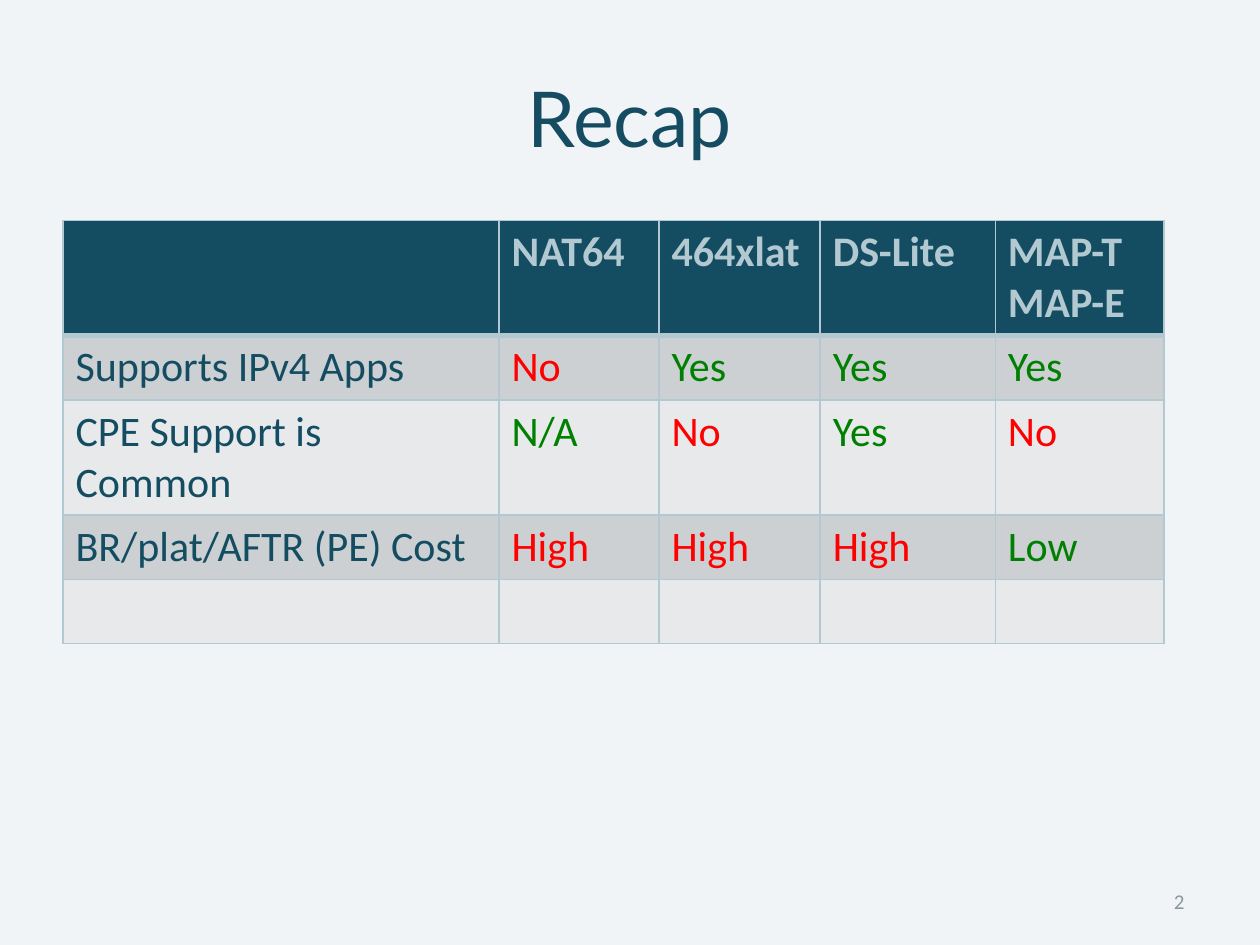
from lxml import etree
from pptx import Presentation
from pptx import util as u
from pptx.dml.color import RGBColor
from pptx.enum import text
from pptx.oxml.ns import qn

COLORS = {
    "background": "F0F4F6", "title": "154C62", "navy": "144D62",
    "pale": "B3C9D1", "band": "CCD0D3", "light": "E7E9EA",
    "bad": "FF0000", "good": "008000", "number": "8C979E",
}
VERDICTS = {"No": "bad", "High": "bad", "Yes": "good", "N/A": "good", "Low": "good"}
ROWS = [
    ["", "NAT64", "464xlat", "DS-Lite", "MAP-T MAP-E"],
    ["Supports IPv4 Apps", "No", "Yes", "Yes", "Yes"],
    ["CPE Support is Common", "N/A", "No", "Yes", "No"],
    ["BR/plat/AFTR (PE) Cost", "High", "High", "High", "Low"],
    ["", "", "", "", ""],
]
COLUMN_WIDTHS = [3.46, 1.27, 1.28, 1.39, 1.34]
ROW_HEIGHTS = [0.91] + [0.51] * 4


class Deck:
    heading_font = "Lato"
    body_font = "Calibri"

    def __init__(self):
        self.prs = Presentation()
        self.prs.slide_width, self.prs.slide_height = u.Inches(10), u.Inches(7.5)
        self.s = self.prs.slides.add_slide(self.prs.slide_layouts[5])
        fill = self.s.background.fill
        fill.solid()
        fill.fore_color.rgb = self.color("background")

    def color(self, name):
        return RGBColor.from_string(COLORS[name])

    def set_text(self, tf, content, size, color, font, bold=False, align=None):
        tf.word_wrap = True
        p = tf.paragraphs[0]
        if content:
            p.add_run().text = content
        p.alignment = align
        p.font.size, p.font.name, p.font.bold = u.Pt(size), font, bold
        p.font.color.rgb = self.color(color)

    def title(self, content, left, top, width, height):
        sp = self.s.shapes.title
        sp.left, sp.top = u.Inches(left), u.Inches(top)
        sp.width, sp.height = u.Inches(width), u.Inches(height)
        sp.text_frame.vertical_anchor = text.MSO_ANCHOR.MIDDLE
        self.set_text(sp.text_frame, content, 44, "title", self.heading_font,
                      align=text.PP_ALIGN.CENTER)

    def label(self, content, left, top, width, height):
        sp = self.s.shapes.add_textbox(*map(u.Inches, (left, top, width, height)))
        sp.text_frame.vertical_anchor = text.MSO_ANCHOR.MIDDLE
        self.set_text(sp.text_frame, content, 12, "number", self.body_font,
                      align=text.PP_ALIGN.RIGHT)

    def borders(self, cell, top, bottom):
        tc_pr = cell._tc.get_or_add_tcPr()
        for side, width in (("L", 1), ("R", 1), ("T", top), ("B", bottom)):
            line = etree.SubElement(tc_pr, qn(f"a:ln{side}"), w=str(u.Pt(width)))
            fill = etree.SubElement(line, qn("a:solidFill"))
            etree.SubElement(fill, qn("a:srgbClr"), val=COLORS["pale"])

    def table(self, rows, left, top, widths, heights):
        frame = self.s.shapes.add_table(
            len(rows), len(widths), u.Inches(left), u.Inches(top),
            u.Inches(sum(widths)), u.Inches(sum(heights)))
        table = frame.table
        for column, width in zip(table.columns, widths):
            column.width = u.Inches(width)
        for row, height in zip(table.rows, heights):
            row.height = u.Inches(height)
        for i, values in enumerate(rows):
            header = i == 0
            fill = "navy" if header else "band" if i % 2 else "light"
            for j, value in enumerate(values):
                cell = table.cell(i, j)
                self.borders(cell, 3 if i == 1 else 1, 3 if header else 1)
                cell.fill.solid()
                cell.fill.fore_color.rgb = self.color(fill)
                color = "pale" if header else VERDICTS.get(value, "navy")
                self.set_text(cell.text_frame, value, 24, color, self.body_font, header)


def main():
    deck = Deck()
    deck.title("Recap", 2.1, 0.3, 5.8, 1.25)
    deck.table(ROWS, 0.5, 1.75, COLUMN_WIDTHS, ROW_HEIGHTS)
    deck.label("2", 7.17, 6.95, 2.33, 0.4)
    deck.prs.save("out.pptx")


if __name__ == "__main__":
    main()
